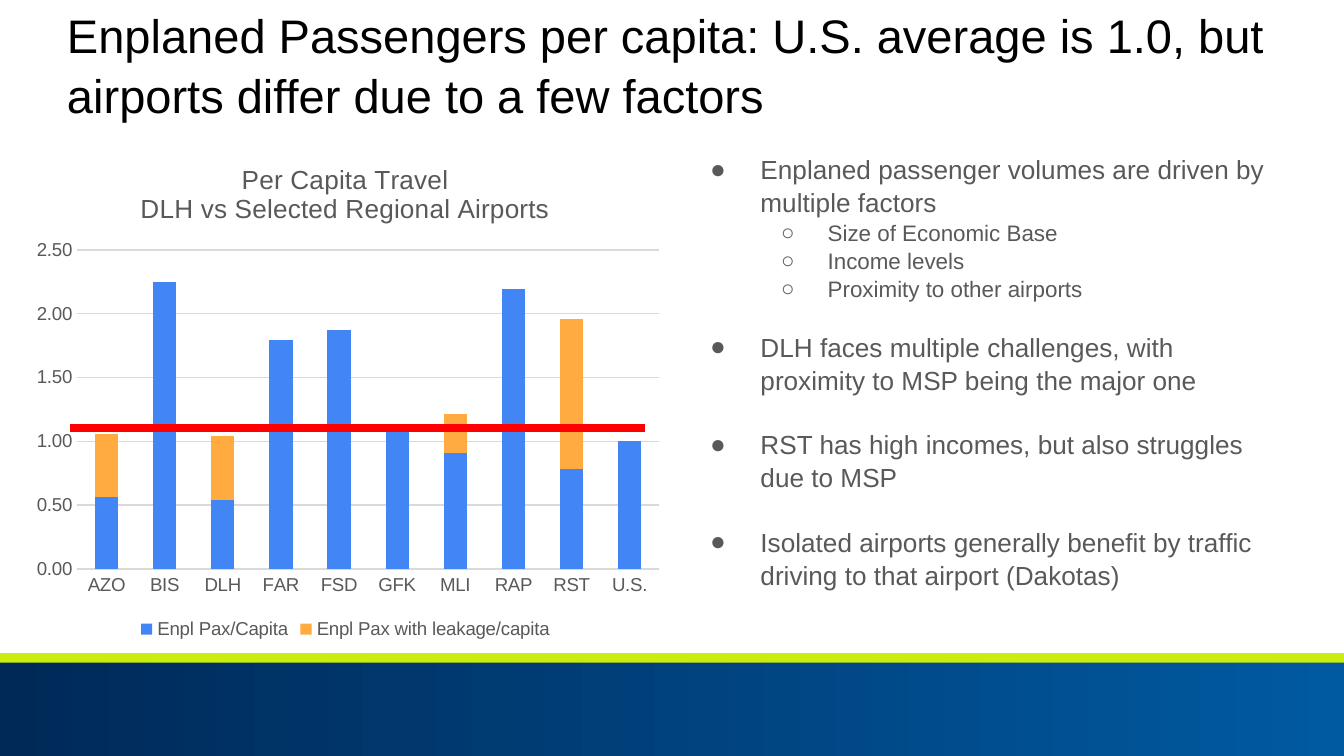
from dataclasses import dataclass

import lxml.etree
import pptx
import pptx.chart.data
import pptx.dml.color
import pptx.enum.chart
import pptx.enum.shapes
import pptx.oxml
import pptx.oxml.ns
import pptx.util

Pt = pptx.util.Pt
qn = pptx.oxml.ns.qn
FONT = "Arial"
GREY = "595959"
GRID = "D9D9D9"
LINE_SPACING = 1.05


@dataclass
class Box:
    left: float
    top: float
    width: float
    height: float

    def lengths(self):
        return Pt(self.left), Pt(self.top), Pt(self.width), Pt(self.height)


@dataclass
class Level:
    bullet: str
    size: float
    margin: float
    hanging: float


@dataclass
class Point:
    text: str
    level: Level
    before: float = 0


@dataclass
class Series:
    name: str
    values: tuple
    color: str


FACTOR = Level("●", 14, 36, 27)
DETAIL = Level("○", 12, 72, 25)

POINTS = [
    Point("Enplaned passenger volumes are driven by multiple factors", FACTOR),
    Point("Size of Economic Base", DETAIL),
    Point("Income levels", DETAIL),
    Point("Proximity to other airports", DETAIL),
    Point("DLH faces multiple challenges, with proximity to MSP being the major one", FACTOR, 14.5),
    Point("RST has high incomes, but also struggles due to MSP", FACTOR, 17),
    Point("Isolated airports generally benefit by traffic driving to that airport (Dakotas)", FACTOR, 17),
]

AIRPORTS = ["AZO", "BIS", "DLH", "FAR", "FSD", "GFK", "MLI", "RAP", "RST", "U.S."]
TRAVEL = [
    Series("Enpl Pax/Capita", (0.56, 2.25, 0.54, 1.79, 1.87, 1.1, 0.91, 2.19, 0.78, 1), "4285F4"),
    Series("Enpl Pax with leakage/capita",
           (0.5, None, 0.5, None, None, None, 0.3, None, 1.18, None), "FFAB40"),
]


def rgb(color: str):
    return pptx.dml.color.RGBColor.from_string(color)


def style_font(font, size: float, color: str):
    font.name = FONT
    font.size = Pt(size)
    font.bold = False
    font.color.rgb = rgb(color)


def add_band(slide, box: Box, *colors: str):
    band = slide.shapes.add_shape(pptx.enum.shapes.MSO_SHAPE.RECTANGLE, *box.lengths())
    band.shadow.inherit = False
    band.line.fill.background()
    if len(colors) == 1:
        band.fill.solid()
        band.fill.fore_color.rgb = rgb(colors[0])
    else:
        band.fill.gradient()
        band.fill.gradient_angle = 0
        for stop, color in zip(band.fill.gradient_stops, colors):
            stop.color.rgb = rgb(color)


def add_text_frame(slide, box: Box):
    frame = slide.shapes.add_textbox(*box.lengths()).text_frame
    frame.word_wrap = True
    frame.margin_left = frame.margin_right = Pt(7.2)
    frame.margin_top = frame.margin_bottom = Pt(7.2)
    return frame


def write_paragraph(paragraph, text: str, size: float, color: str):
    paragraph.text = text
    paragraph.line_spacing = LINE_SPACING
    for run in paragraph.runs:
        style_font(run.font, size, color)


def set_bullet(paragraph, level: Level):
    properties = paragraph._p.get_or_add_pPr()
    properties.set("marL", str(Pt(level.margin)))
    properties.set("indent", str(-Pt(level.hanging)))
    color = lxml.etree.SubElement(properties, qn("a:buClr"))
    lxml.etree.SubElement(color, qn("a:srgbClr"), val=GREY)
    lxml.etree.SubElement(properties, qn("a:buFont"), typeface=FONT)
    lxml.etree.SubElement(properties, qn("a:buChar"), char=level.bullet)


def add_points(slide, box: Box, points: list[Point]):
    frame = add_text_frame(slide, box)
    for index, point in enumerate(points):
        paragraph = frame.add_paragraph() if index else frame.paragraphs[0]
        set_bullet(paragraph, point.level)
        write_paragraph(paragraph, point.text, point.level.size, GREY)
        if point.before:
            paragraph.space_before = Pt(point.before)


def set_layout(owner, inner: bool, **fractions: float):
    layout = owner.get_or_add_layout() if hasattr(owner, "get_or_add_layout") else owner.find(qn("c:layout"))
    if layout is None:
        layout = lxml.etree.Element(qn("c:layout"))
        owner.insert(0, layout)
    for child in list(layout):
        layout.remove(child)
    manual = lxml.etree.SubElement(layout, qn("c:manualLayout"))
    if inner:
        lxml.etree.SubElement(manual, qn("c:layoutTarget"), val="inner")
    for side in ("x", "y"):
        lxml.etree.SubElement(manual, qn(f"c:{side}Mode"), val="edge")
    for key, fraction in fractions.items():
        lxml.etree.SubElement(manual, qn(f"c:{key}"), val=str(fraction))


def style_axis(axis):
    axis.major_tick_mark = axis.minor_tick_mark = pptx.enum.chart.XL_TICK_MARK.NONE
    style_font(axis.tick_labels.font, 10, GREY)


def add_travel_chart(slide, box: Box):
    data = pptx.chart.data.CategoryChartData(number_format="0.00")
    data.categories = AIRPORTS
    for series in TRAVEL:
        data.add_series(series.name, series.values)
    kind = pptx.enum.chart.XL_CHART_TYPE.COLUMN_STACKED
    chart = slide.shapes.add_chart(kind, *box.lengths(), data).chart
    style_font(chart.font, 10, "000000")

    title = chart.chart_title
    title.text_frame.text = "Per Capita Travel\nDLH vs Selected Regional Airports"
    for paragraph in title.text_frame.paragraphs:
        for run in paragraph.runs:
            style_font(run.font, 14, GREY)
    title.include_in_layout = False
    set_layout(title._element, False, x=0.18, y=0.04)
    set_layout(chart._chartSpace.chart.plotArea, True, x=0.09, y=0.22, w=0.89, h=0.63)

    chart.has_legend = True
    chart.legend.position = pptx.enum.chart.XL_LEGEND_POSITION.BOTTOM
    chart.legend.include_in_layout = False
    style_font(chart.legend.font, 10, GREY)

    style_axis(chart.category_axis)
    chart.category_axis.format.line.color.rgb = rgb(GRID)
    chart.category_axis.format.line.width = Pt(0.75)
    rates = chart.value_axis
    style_axis(rates)
    rates.minimum_scale, rates.maximum_scale, rates.major_unit = 0, 2.5, 0.5
    rates.tick_labels.number_format = "0.00"
    rates.tick_labels.number_format_is_linked = False
    rates.format.line.fill.background()
    rates.major_gridlines.format.line.color.rgb = rgb(GRID)
    rates.major_gridlines.format.line.width = Pt(0.75)

    columns = chart.plots[0]
    columns.vary_by_categories = False
    columns.gap_width, columns.overlap = 150, 100
    for column, series in zip(columns.series, TRAVEL):
        column.format.fill.solid()
        column.format.fill.fore_color.rgb = rgb(series.color)


def add_average_line(slide, left: float, right: float, top: float):
    average = slide.shapes.add_connector(
        pptx.enum.shapes.MSO_CONNECTOR.STRAIGHT, Pt(left), Pt(top), Pt(right), Pt(top))
    average.line.color.rgb = rgb("FF0000")
    average.line.width = Pt(4)
    lxml.etree.SubElement(average._element.spPr, qn("a:effectLst"))


def main():
    deck = pptx.Presentation()
    deck.slide_width, deck.slide_height = Pt(720), Pt(405)
    slide = deck.slides.add_slide(deck.slide_layouts[6])
    add_band(slide, Box(0, 354.5, 720, 50.5), "002958", "005AA1")
    add_band(slide, Box(0, 350, 720, 5), "CBEC0F")
    headline = add_text_frame(slide, Box(28.8, -5, 671, 45.4))
    write_paragraph(headline.paragraphs[0],
                    "Enplaned Passengers per capita: U.S. average is 1.0, but airports differ due to a few factors",
                    25.2, "000000")
    add_travel_chart(slide, Box(10, 74.2, 350, 271.4))
    add_points(slide, Box(364.3, 74.2, 325.4, 269.3), POINTS)
    add_average_line(slide, 37.5, 345.5, 229.2)
    deck.save("out.pptx")


if __name__ == "__main__":
    main()
